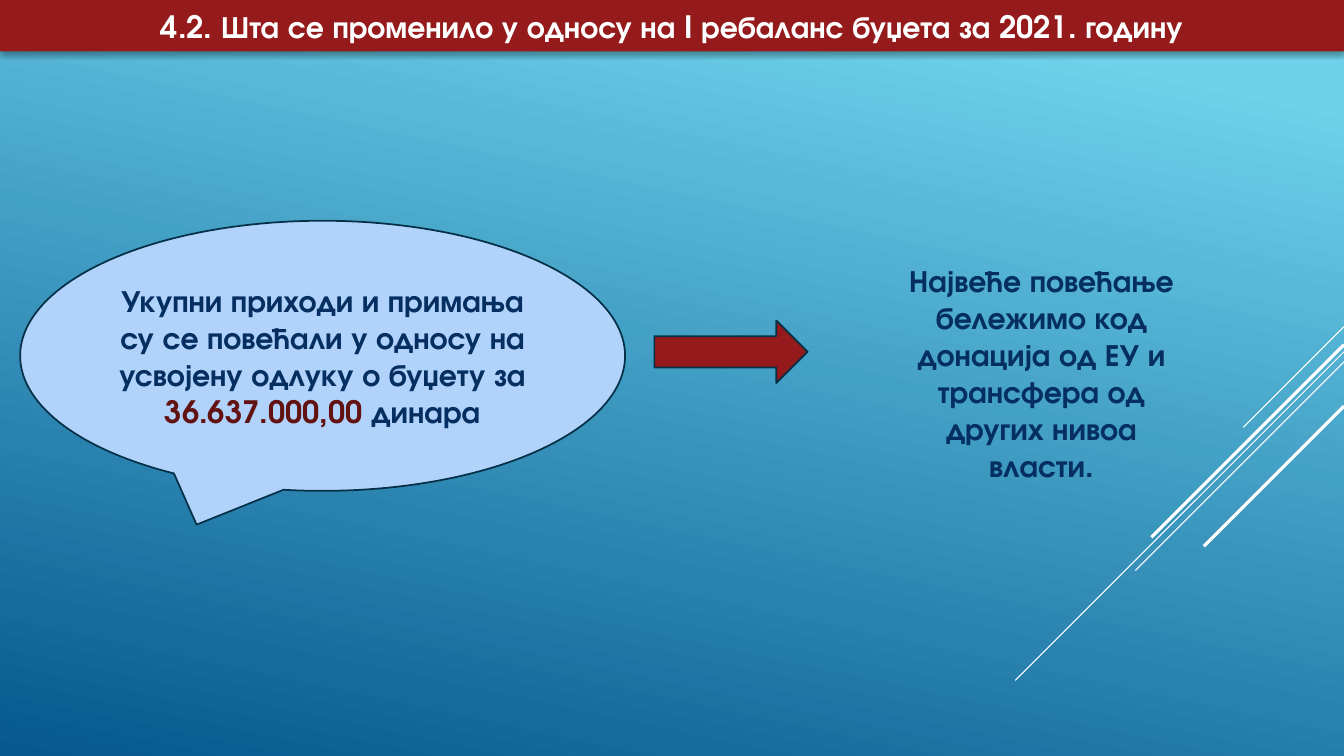
from dataclasses import dataclass

from lxml.etree import SubElement
from pptx import Presentation
from pptx.dml.color import RGBColor
from pptx.enum.shapes import MSO_CONNECTOR, MSO_SHAPE
from pptx.enum.text import MSO_ANCHOR, MSO_AUTO_SIZE, PP_ALIGN
from pptx.oxml import parse_xml
from pptx.oxml.ns import nsdecls, qn
from pptx.shapes.autoshape import Shape
from pptx.slide import Slide
from pptx.util import Inches, Pt

FONT = "TeX Gyre Adventor"
RED, NAVY, WHITE = "941A1B", "052F61", "FFFFFF"
OUTLINE, PALE_BLUE, DARK_RED = "043148", "B1D3FB", "631212"
SLIDE_WIDTH, SLIDE_HEIGHT = 13.33, 7.5


@dataclass(frozen=True)
class Span:
    text: str
    color: str = NAVY


@dataclass(frozen=True)
class Panel:
    kind: MSO_SHAPE
    left: float
    top: float
    width: float
    height: float
    fill: str | None = None
    spans: tuple[Span, ...] = ()


@dataclass(frozen=True)
class Streak:
    """A 45-degree line that falls leftwards from the right edge."""
    top: float
    reach: float
    weight: float


STREAKS = (
    Streak(3.24, 1.0, 0.75),
    Streak(3.49, 3.26, 0.75),
    Streak(3.59, 2.07, 0.75),
    Streak(3.42, 1.91, 2.25),
    Streak(4.03, 1.39, 2.25),
)

TITLE = Span("4.2. Шта се променило у односу на I ребаланс буџета за 2021. годину", WHITE)

PANELS = (
    Panel(MSO_SHAPE.OVAL_CALLOUT, 0.2, 2.19, 6, 2.68, PALE_BLUE, (
        Span("Укупни приходи и примања су се повећали у односу на усвојену одлуку о буџету за "),
        Span("36.637.000,00 ", DARK_RED),
        Span("динара"),
    )),
    Panel(MSO_SHAPE.RIGHT_ARROW, 6.49, 3.18, 1.52, 0.62, RED),
    Panel(MSO_SHAPE.TEAR, 8.31, 2.09, 4.04, 3.21, None, (
        Span("Највеће повећање бележимо код донација од ЕУ и трансфера од других нивоа власти."),
    )),
)


def rgb(color: str) -> RGBColor:
    return RGBColor.from_string(color)


def write_text(box: Shape, spans: tuple[Span, ...]) -> None:
    frame = box.text_frame
    frame.word_wrap = True
    frame.auto_size = MSO_AUTO_SIZE.NONE
    frame.vertical_anchor = MSO_ANCHOR.MIDDLE
    para = frame.paragraphs[0]
    para.alignment = PP_ALIGN.CENTER
    para.font.name = FONT
    para.font.size = Pt(22)
    para.font.bold = True
    for span in spans:
        run = para.add_run()
        run.text = span.text
        run.font.color.rgb = rgb(span.color)


def paint_background(page: Slide) -> None:
    fill = page.background.fill
    fill.gradient()
    fill.gradient_angle = 360 - 102
    for stop, position, color in zip(fill.gradient_stops, (0.1, 1), ("6ED2EB", "06588E")):
        stop.position = position
        stop.color.rgb = rgb(color)


def draw_streak(page: Slide, streak: Streak) -> None:
    line = page.shapes.add_connector(
        MSO_CONNECTOR.STRAIGHT,
        Inches(SLIDE_WIDTH), Inches(streak.top),
        Inches(SLIDE_WIDTH - streak.reach), Inches(streak.top + streak.reach),
    )
    line.line.color.rgb = rgb(WHITE)
    line.line.width = Pt(streak.weight)
    SubElement(line._element.spPr, qn("a:effectLst"))


def draw_title(page: Slide) -> None:
    title = page.shapes.title
    title.left, title.top = Inches(0), Inches(0)
    title.width, title.height = Inches(SLIDE_WIDTH), Inches(0.51)
    # Rounded outline and soft shadow
    properties = title._element.spPr
    properties.append(parse_xml(
        f'<a:prstGeom {nsdecls("a")} prst="roundRect"><a:avLst/></a:prstGeom>'))
    title.fill.solid()
    title.fill.fore_color.rgb = rgb(RED)
    properties.append(parse_xml(
        f'<a:effectLst {nsdecls("a")}>'
        f'<a:outerShdw blurRad="{Pt(3.5)}" dist="{Pt(2.2)}" dir="5400000" rotWithShape="0">'
        '<a:srgbClr val="000000"><a:alpha val="32000"/></a:srgbClr>'
        '</a:outerShdw></a:effectLst>'))
    write_text(title, (TITLE,))


def draw_panel(page: Slide, panel: Panel) -> None:
    box = page.shapes.add_shape(
        panel.kind, Inches(panel.left), Inches(panel.top),
        Inches(panel.width), Inches(panel.height),
    )
    box.shadow.inherit = False
    if panel.fill:
        box.fill.solid()
        box.fill.fore_color.rgb = rgb(panel.fill)
        box.line.color.rgb = rgb(OUTLINE)
        box.line.width = Pt(1.25)
    else:
        box.fill.background()
        box.line.fill.background()
    if panel.spans:
        write_text(box, panel.spans)


def main() -> None:
    deck = Presentation()
    deck.slide_width, deck.slide_height = Inches(SLIDE_WIDTH), Inches(SLIDE_HEIGHT)
    page = deck.slides.add_slide(deck.slide_layouts[5])

    # Backdrop
    paint_background(page)
    for streak in STREAKS:
        draw_streak(page, streak)

    # Content
    draw_title(page)
    for panel in PANELS:
        draw_panel(page, panel)

    deck.save("out.pptx")


if __name__ == "__main__":
    main()
